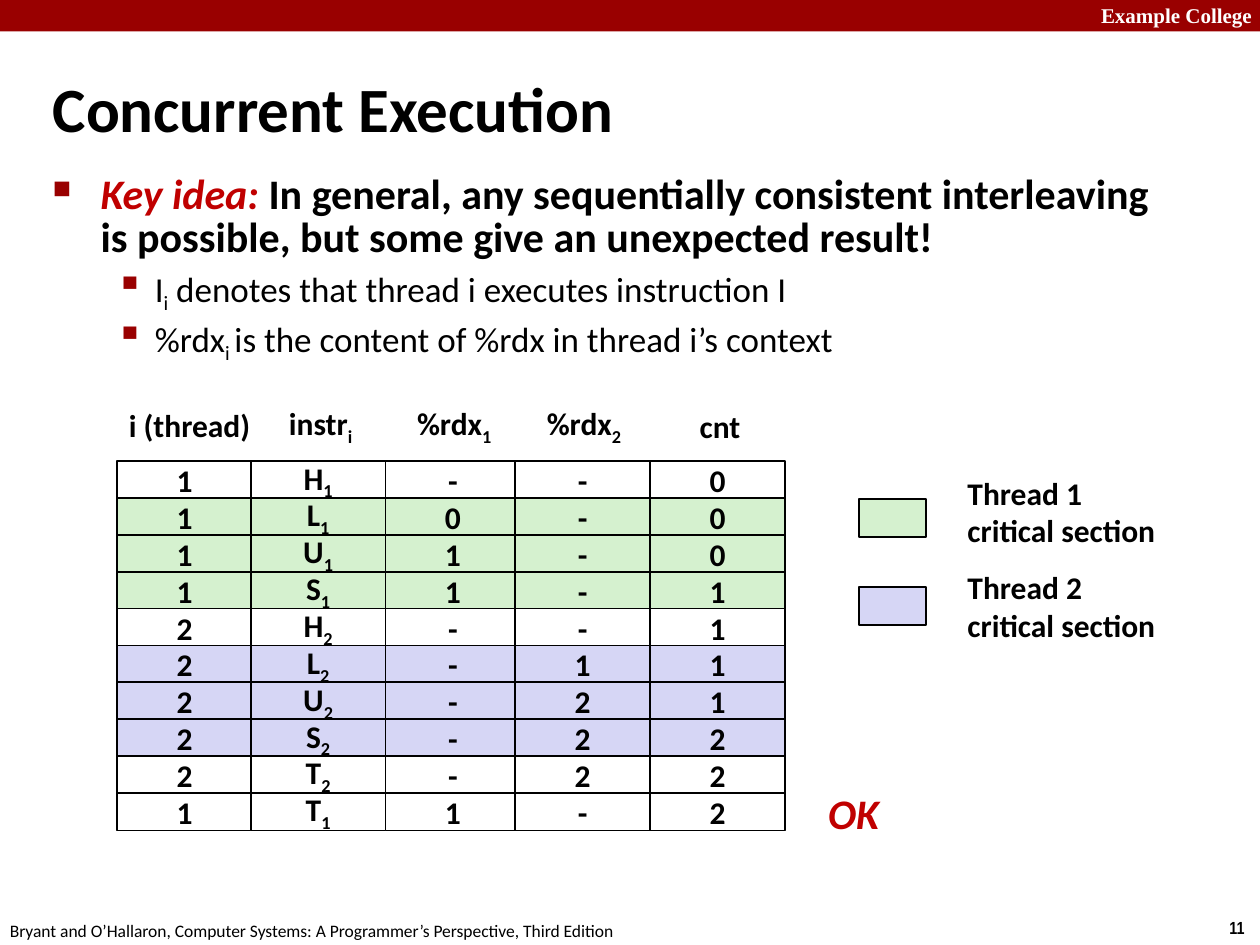
from lxml import etree
from pptx import Presentation
from pptx import util as u
from pptx.dml.color import RGBColor
from pptx.enum import shapes, text
from pptx.oxml.ns import qn

COLORS = {
    "banner": "990000", "accent": "C00000", "ink": "000000", "paper": "FFFFFF",
    "thread 1": "D5F1CF", "thread 2": "D6D6F5",
}
WIDTH, HEIGHT = u.Inches(10), u.Inches(7.5)

# Trace grid, in percent of the slide's size
COLUMN_LEFTS = (9.3, 19.9, 30.6, 40.9, 51.6)
COLUMN_WIDTH = 10.7
TRACE_TOP, ROW_PITCH, ROW_HEIGHT = 48.8, 3.9, 4

HEADINGS = (  # label, left, top, width
    ("i (thread)", 9.2, 42.27, 11.7),
    ("instr_i", 21.9, 42.4, 7.1),
    ("%rdx_1", 32, 42.4, 8.1),
    ("%rdx_2", 42.3, 42.4, 8.1),
    ("cnt", 54.5, 42.4, 5.3),
)
TRACE = (  # thread, instruction, %rdx1, %rdx2, cnt
    ("1", "H_1", "-", "-", "0"),
    ("1", "L_1", "0", "-", "0"),
    ("1", "U_1", "1", "-", "0"),
    ("1", "S_1", "1", "-", "1"),
    ("2", "H_2", "-", "-", "1"),
    ("2", "L_2", "-", "1", "1"),
    ("2", "U_2", "-", "2", "1"),
    ("2", "S_2", "-", "2", "2"),
    ("2", "T_2", "-", "2", "2"),
    ("1", "T_1", "1", "-", "2"),
)
CRITICAL = "LUS"


def rgb(name):
    return RGBColor.from_string(COLORS[name])


def place(left, top, width, height):
    """Turn percentages of the slide's size into lengths."""
    return (int(WIDTH * left / 100), int(HEIGHT * top / 100),
            int(WIDTH * width / 100), int(HEIGHT * height / 100))


def style(para, size, color="ink", bold=True, italic=False, face="Calibri"):
    font = para.font
    font.name, font.size = face, u.Pt(size)
    font.bold, font.italic = bold, italic
    font.color.rgb = rgb(color)


def add_spans(para, label):
    """Write label, where each odd part between underscores is a subscript."""
    for index, part in enumerate(label.split("_")):
        span = para.add_run()
        span.text = part
        if index % 2:
            span._r.get_or_add_rPr().set("baseline", "-25000")


def add_label(page, label, area, size=18, wrap=False, grow=True,
              align=text.PP_ALIGN.LEFT, anchor=text.MSO_ANCHOR.TOP, **look):
    box = page.shapes.add_textbox(*place(*area))
    frame = box.text_frame
    frame.word_wrap = wrap
    frame.vertical_anchor = anchor
    if grow:
        frame.auto_size = text.MSO_AUTO_SIZE.SHAPE_TO_FIT_TEXT
    para = frame.paragraphs[0]
    para.alignment = align
    add_spans(para, label)
    style(para, size, **look)
    return para


def add_box(page, area, fill, outlined=True):
    box = page.shapes.add_shape(shapes.MSO_SHAPE.RECTANGLE, *place(*area))
    box.shadow.inherit = False
    box.fill.solid()
    box.fill.fore_color.rgb = rgb(fill)
    if outlined:
        box.line.color.rgb = rgb("ink")
        box.line.width = u.Pt(1)
    else:
        box.line.fill.background()
    return box


def indent(para, margin, hanging):
    props = para._p.get_or_add_pPr()
    props.set("marL", str(u.Inches(margin)))
    props.set("indent", str(-u.Inches(hanging)))
    return props


def add_bullet(para, mark, percent, margin, hanging):
    props = indent(para, margin, hanging)
    color = etree.SubElement(props, qn("a:buClr"))
    etree.SubElement(color, qn("a:srgbClr"), val=COLORS["banner"])
    etree.SubElement(props, qn("a:buSzPct"), val=str(percent * 1000))
    etree.SubElement(props, qn("a:buChar"), char=mark)


def add_frame(page):
    add_box(page, (0, 0, 100, 3.33), "banner", outlined=False)
    add_label(page, "Example College", (86.4, -0.4, 14.3, 4), 12, wrap=True,
              color="paper", face="Times New Roman")
    add_label(page, "11", (96.6, 96.4, 3.4, 3.6), 10, face="Arial Narrow")
    add_label(page, "Bryant and O’Hallaron, Computer Systems: "
              "A Programmer’s Perspective, Third Edition",
              (-0.2, 96.67, 50.8, 3.6), 10, bold=False)


def add_key_idea(page):
    box = page.shapes.add_textbox(*place(3.2, 17.87, 90.9, 21.2))
    frame = box.text_frame
    frame.word_wrap = True
    para = frame.paragraphs[0]
    add_bullet(para, "■", 60, 0.38, 0.38)
    para.line_spacing, para.space_before = 0.85, u.Pt(4.8)
    add_spans(para, "Key idea: ")
    lead = para.runs[0].font
    lead.italic, lead.color.rgb = True, rgb("accent")
    add_spans(para, "In general, any sequentially consistent interleaving "
              "is possible, but some give an unexpected result!")
    style(para, 24)
    for label in ("I_i_ denotes that thread i executes instruction I",
                  "%rdx_i _is the content of %rdx in thread i’s context"):
        para = frame.add_paragraph()
        para.level = 1
        add_bullet(para, "▪", 110, 0.81, 0.31)
        para.line_spacing, para.space_before = 0.9, u.Pt(4)
        add_spans(para, label)
        style(para, 20, bold=False)


def add_trace(page):
    for label, left, top, width in HEADINGS:
        add_label(page, label, (left, top, width, 5.33),
                  align=text.PP_ALIGN.CENTER, anchor=text.MSO_ANCHOR.MIDDLE)
    for column, left in enumerate(COLUMN_LEFTS):
        for row, step in enumerate(TRACE):
            fill = f"thread {step[0]}" if step[1][0] in CRITICAL else "paper"
            top = TRACE_TOP + row * ROW_PITCH
            cell = add_box(page, (left, top, COLUMN_WIDTH, ROW_HEIGHT), fill)
            cell.text_frame.vertical_anchor = text.MSO_ANCHOR.MIDDLE
            para = cell.text_frame.paragraphs[0]
            para.alignment = text.PP_ALIGN.CENTER
            add_spans(para, step[column])
            style(para, 18)


def add_legend(page):
    for thread, swatch_top, label_top in ((1, 52.8, 49.47), (2, 62.13, 59.47)):
        add_box(page, (68.2, swatch_top, 5.3, ROW_HEIGHT), f"thread {thread}")
        add_label(page, f"Thread {thread} critical section",
                  (75.8, label_top, 17.5, 9.47), wrap=True)


def main():
    deck = Presentation()
    deck.slide_width, deck.slide_height = WIDTH, HEIGHT
    page = deck.slides.add_slide(deck.slide_layouts[6])
    add_frame(page)
    title = add_label(page, "Concurrent Execution", (3.2, 7.2, 72.4, 8.4), 36,
                      wrap=True, grow=False, anchor=text.MSO_ANCHOR.MIDDLE)
    indent(title, 0.13, 0.13)
    add_key_idea(page)
    add_trace(page)
    add_label(page, "OK", (64.7, 82.67, 6.1, 6.67), 24, color="accent",
              italic=True, align=text.PP_ALIGN.CENTER,
              anchor=text.MSO_ANCHOR.MIDDLE)
    add_legend(page)
    deck.save("out.pptx")


if __name__ == "__main__":
    main()
